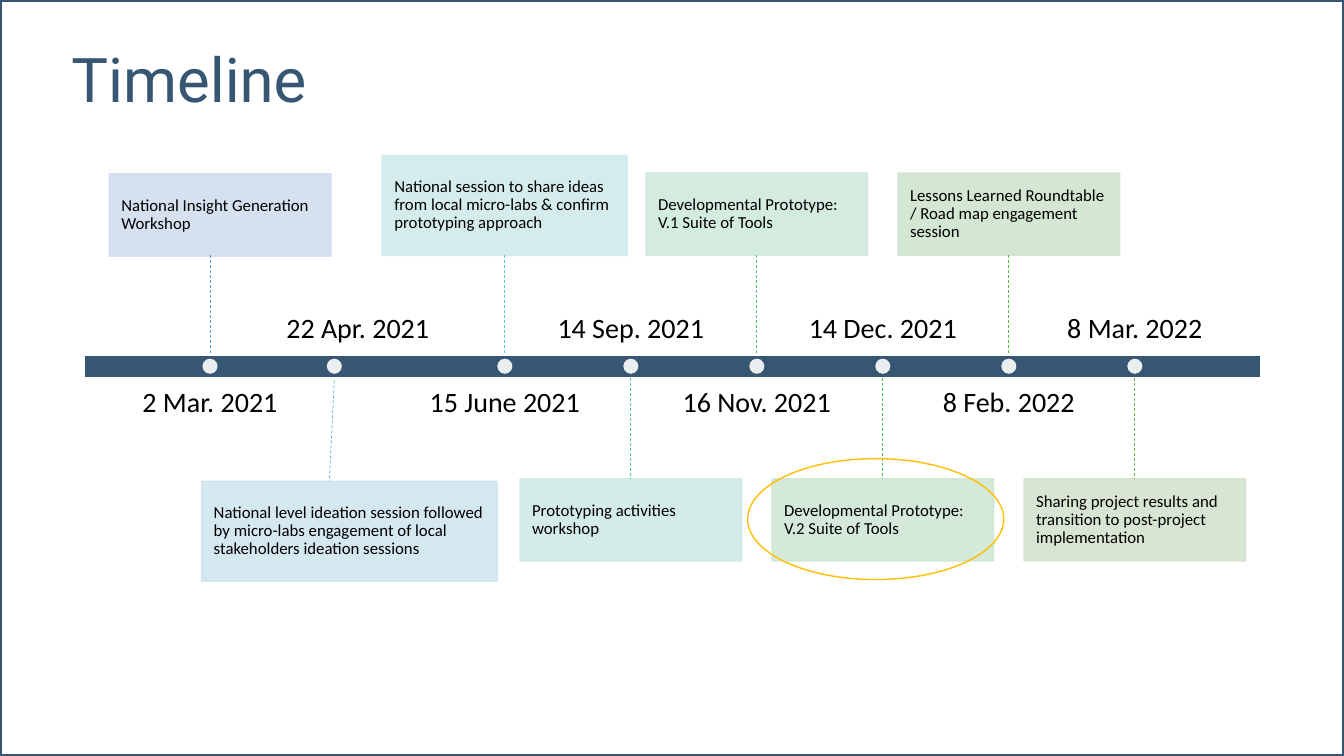
import collections
import dataclasses

import lxml.etree
import pptx
import pptx.dml.color
import pptx.enum.dml
import pptx.enum.shapes
import pptx.enum.text
import pptx.oxml.ns
import pptx.util

KIND = pptx.enum.shapes.MSO_SHAPE
ALIGN = pptx.enum.text.PP_ALIGN
ANCHOR = pptx.enum.text.MSO_ANCHOR
qn = pptx.oxml.ns.qn

COLS, ROWS = 160, 90


@dataclasses.dataclass(frozen=True)
class Theme:
    navy: str = "365673"
    white: str = "FFFFFF"
    black: str = "000000"
    gold: str = "FFC000"
    head: str = "Roboto"
    body: str = "Calibri"
    title: int = 44
    date: int = 20
    note: int = 12
    alpha: int = 90


class Deck:
    """Draws on one slide; lengths are grid columns and rows."""

    def __init__(self, theme):
        self.theme = theme
        self.prs = pptx.Presentation()
        self.prs.slide_width = pptx.util.Inches(13.33)
        self.prs.slide_height = pptx.util.Inches(7.5)
        self.slide = self.prs.slides.add_slide(self.prs.slide_layouts[5])

    def x(self, cols):
        return round(self.prs.slide_width * cols / COLS)

    def y(self, rows):
        return round(self.prs.slide_height * rows / ROWS)

    def area(self, left, top, wide, high):
        return self.x(left), self.y(top), self.x(wide), self.y(high)

    def color(self, value):
        return pptx.dml.color.RGBColor.from_string(value)

    def label(self, frame, text, font, size, color, align, anchor, inset, space):
        frame.text = text
        frame.word_wrap = True
        frame.auto_size = pptx.enum.text.MSO_AUTO_SIZE.NONE
        frame.vertical_anchor = anchor
        frame.margin_left = frame.margin_right = pptx.util.Inches(inset[0])
        frame.margin_top = frame.margin_bottom = pptx.util.Inches(inset[1])
        para = frame.paragraphs[0]
        para.alignment = align
        para.line_spacing = space
        for run in para.runs:
            run.font.name = font
            run.font.size = pptx.util.Pt(size)
            run.font.color.rgb = self.color(color)

    def title(self, text, *area):
        shape = self.slide.shapes.title
        shape.left, shape.top, shape.width, shape.height = self.area(*area)
        look = self.theme
        self.label(shape.text_frame, text, look.head, look.title, look.navy,
                   ALIGN.LEFT, ANCHOR.TOP, (0.1, 0.05), 1.0)

    def shape(self, kind, *area, fill=None, line=None, width=1, clear=False):
        shape = self.slide.shapes.add_shape(kind, *self.area(*area))
        shape.shadow.inherit = False
        if fill:
            shape.fill.solid()
            shape.fill.fore_color.rgb = self.color(fill)
        else:
            shape.fill.background()
        if line:
            shape.line.color.rgb = self.color(line)
            shape.line.width = pptx.util.Pt(width)
        else:
            shape.line.fill.background()
        if clear:
            for tint in shape.element.spPr.iter(qn("a:srgbClr")):
                alpha = lxml.etree.SubElement(tint, qn("a:alpha"))
                alpha.set("val", str(self.theme.alpha * 1000))
        return shape

    def note(self, text, fill, *area):
        box = self.shape(KIND.RECTANGLE, *area, fill=fill, line=fill, clear=True)
        look = self.theme
        self.label(box.text_frame, text, look.body, look.note, look.black,
                   ALIGN.LEFT, ANCHOR.MIDDLE, (0.12, 0.12), 0.9)

    def date(self, text, anchor, *area):
        box = self.slide.shapes.add_textbox(*self.area(*area))
        look = self.theme
        self.label(box.text_frame, text, look.body, look.date, look.black,
                   ALIGN.CENTER, anchor, (0, 0), 0.9)

    def link(self, color, x1, y1, x2, y2):
        line = self.slide.shapes.add_connector(
            pptx.enum.shapes.MSO_CONNECTOR.STRAIGHT,
            self.x(x1), self.y(y1), self.x(x2), self.y(y2))
        line.line.color.rgb = self.color(color)
        line.line.width = pptx.util.Pt(0.5)
        line.line.dash_style = pptx.enum.dml.MSO_LINE.DASH
        lxml.etree.SubElement(line.element.spPr, qn("a:effectLst"))

    def dot(self, x, y, size):
        self.shape(KIND.OVAL, x - size / 2, y - size / 2, size, size,
                   fill=self.theme.white, clear=True)


# Milestones alternate above and below the bar.
# back: box edge to stop; drop: box shift down; lean: link shift; move: date shift
Stop = collections.namedtuple(
    "Stop", "x day text fill line back wide high drop lean move",
    defaults=(13.2, 26.4, 9.8, 0, 0, 0))

STOPS = [
    Stop(25, "2 Mar. 2021", "National Insight Generation Workshop",
         "D2DEEF", "5B9BD5", back=12, drop=0.1),
    Stop(39.8, "22 Apr. 2021",
         "National level ideation session followed by micro-labs engagement "
         "of local stakeholders ideation sessions",
         "D1E5EE", "57B7D1", back=15.8, wide=35.2, high=11.9,
         drop=0.3, lean=0.6, move=2.8),
    Stop(60.1, "15 June 2021",
         "National session to share ideas from local micro-labs & confirm "
         "prototyping approach",
         "D1EBEC", "53CCC5", back=14.6, wide=29.2, high=11.9),
    Stop(75.1, "14 Sep. 2021", "Prototyping activities workshop",
         "D0EAE5", "4FC7A0"),
    Stop(90.1, "16 Nov. 2021", "Developmental Prototype: V.1 Suite of Tools",
         "D0E9DD", "4CC27B"),
    Stop(105.1, "14 Dec. 2021", "Developmental Prototype: V.2 Suite of Tools",
         "D0E7D5", "48BD58"),
    Stop(120.1, "8 Feb. 2022",
         "Lessons Learned Roundtable / Road map engagement session",
         "D0E5CF", "55B646"),
    Stop(135.1, "8 Mar. 2022",
         "Sharing project results and transition to post-project implementation",
         "D5E3CF", "70AD47"),
]

BAR, THICK = 42.2, 2.8
UPPER, LOWER = 30.4, 57
DAY_W, DAY_H = 24, 7.9


def main():
    look = Theme()
    deck = Deck(look)

    # Title and bar
    deck.title("Timeline", 7.3, 4.3, 74.4, 10.1)
    deck.shape(KIND.RECTANGLE, 10, BAR, 140.1, THICK,
               fill=look.navy, line=look.white, width=1.5)

    # Milestones
    for i, stop in enumerate(STOPS):
        above = i % 2 == 0
        top = (UPPER - stop.high if above else LOWER) + stop.drop
        deck.note(stop.text, stop.fill, stop.x - stop.back, top,
                  stop.wide, stop.high)
        if above:
            deck.link(stop.line, stop.x, UPPER, stop.x, BAR)
        else:
            deck.link(stop.line, stop.x, BAR + THICK + stop.drop,
                      stop.x - stop.lean, LOWER + stop.drop)
        deck.date(stop.day, ANCHOR.TOP if above else ANCHOR.BOTTOM,
                  stop.x - DAY_W / 2 + stop.move, 46.2 if above else 33.1,
                  DAY_W, DAY_H)
        deck.dot(stop.x, BAR + THICK / 2, 1.8)

    # Highlight and frame
    deck.shape(KIND.OVAL, 89, 54.6, 30.5, 14.4, line=look.gold)
    deck.shape(KIND.RECTANGLE, 0, 0, COLS, ROWS, line=look.navy, width=2.25)

    deck.prs.save("out.pptx")


if __name__ == "__main__":
    main()
